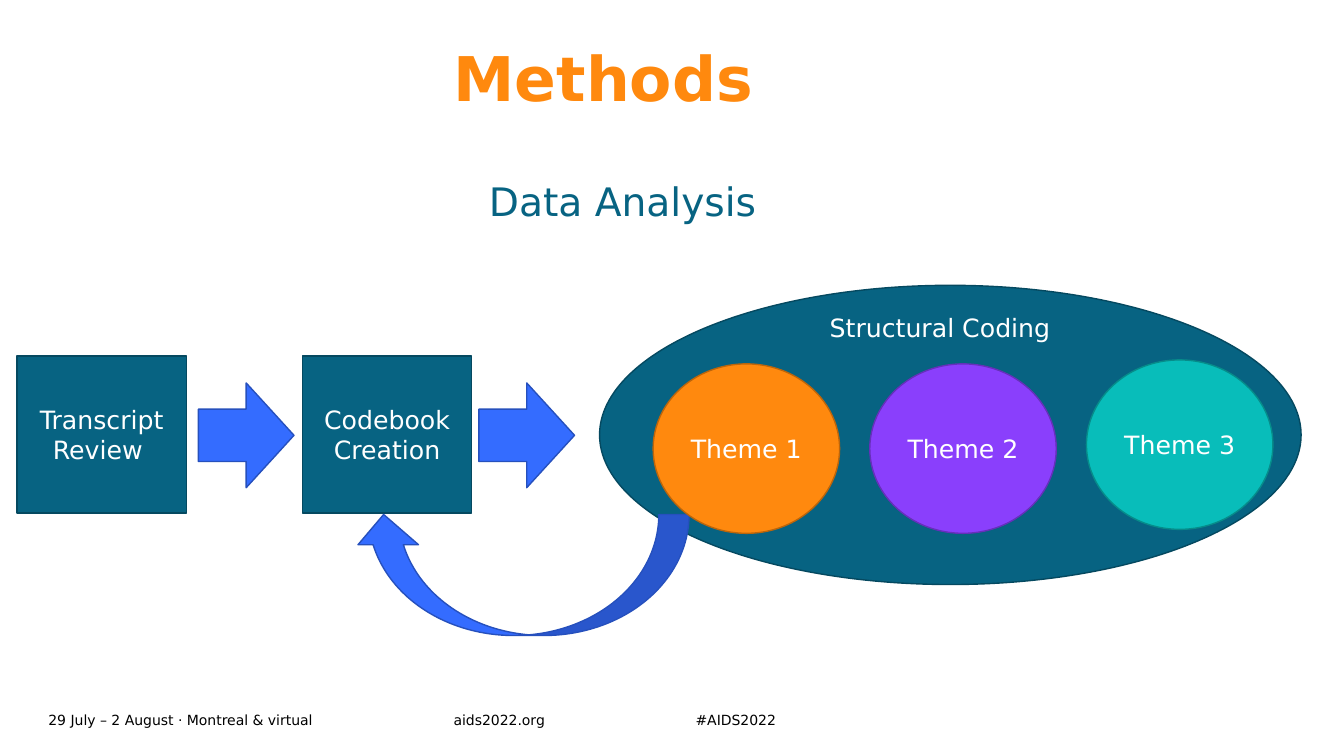
from dataclasses import dataclass

from pptx import Presentation
from pptx.dml.color import RGBColor
from pptx.enum.shapes import MSO_SHAPE
from pptx.enum.text import MSO_ANCHOR, MSO_AUTO_SIZE, PP_ALIGN
from pptx.util import Cm, Pt

FONT = "DejaVu Sans"
HUES = {
    "black": "000000",
    "white": "FFFFFF",
    "teal": "076382",
    "teal edge": "054960",
    "blue": "346CFF",
    "blue edge": "2650BD",
    "orange": "FF890E",
    "orange edge": "BD650A",
    "purple": "8A3FFC",
    "purple edge": "662FBA",
    "aqua": "08BDBA",
    "aqua edge": "068C8A",
}


@dataclass
class Box:
    left: float
    top: float
    width: float
    height: float


@dataclass
class Node:
    kind: MSO_SHAPE
    box: Box
    hue: str
    text: str = ""
    turn: float = 0


def tint(name: str) -> RGBColor:
    return RGBColor.from_string(HUES[name])


def place(shape, box: Box) -> None:
    shape.left, shape.top = Cm(box.left), Cm(box.top)
    shape.width, shape.height = Cm(box.width), Cm(box.height)


def write(shape, text: str, *, size: float = 18, hue: str = "white",
          bold: bool = False, align=PP_ALIGN.CENTER,
          anchor=MSO_ANCHOR.MIDDLE, inset: bool = True,
          lines: float = 1.0) -> None:
    frame = shape.text_frame
    frame.word_wrap = True
    frame.auto_size = MSO_AUTO_SIZE.NONE
    frame.vertical_anchor = anchor
    if not inset:
        frame.margin_left = frame.margin_right = Cm(0)
        frame.margin_top = frame.margin_bottom = Cm(0)
    frame.text = text
    para = frame.paragraphs[0]
    para.alignment = align
    para.line_spacing = lines
    font = para.runs[0].font
    font.name, font.size, font.bold = FONT, Pt(size), bold
    font.color.rgb = tint(hue)


def label(slide, box: Box, text: str, **style) -> None:
    shape = slide.shapes.add_textbox(0, 0, 0, 0)
    place(shape, box)
    write(shape, text, **style)


def draw(slide, node: Node) -> None:
    shape = slide.shapes.add_shape(node.kind, 0, 0, 0, 0)
    place(shape, node.box)
    shape.rotation = node.turn
    shape.shadow.inherit = False
    shape.fill.solid()
    shape.fill.fore_color.rgb = tint(node.hue)
    shape.line.color.rgb = tint(f"{node.hue} edge")
    shape.line.width = Pt(1)
    if node.text:
        write(shape, node.text)


def main() -> None:
    deck = Presentation()
    deck.slide_width, deck.slide_height = Cm(33.87), Cm(19.05)
    slide = deck.slides.add_slide(deck.slide_layouts[5])

    title = slide.shapes.title
    place(title, Box(11.43, 1.22, 21.21, 3.4))
    write(title, "Methods", size=44, hue="orange", bold=True,
          align=PP_ALIGN.LEFT, anchor=MSO_ANCHOR.TOP, inset=False, lines=0.9)

    for left, width, text in (
        (1.22, 10.21, "29 July – 2 August · Montreal & virtual"),
        (11.43, 4.9, "aids2022.org"),
        (17.53, 4.9, "#AIDS2022"),
    ):
        label(slide, Box(left, 17.83, width, 0.61), text, size=10,
              hue="black", align=PP_ALIGN.LEFT, inset=False)

    label(slide, Box(7.42, 4.34, 16.54, 1.57), "Data Analysis", size=28,
          hue="teal", anchor=MSO_ANCHOR.TOP)
    draw(slide, Node(MSO_SHAPE.OVAL, Box(15.11, 7.19, 17.68, 7.54), "teal"))
    label(slide, Box(20.45, 7.75, 6.48, 1.02), "Structural Coding",
          anchor=MSO_ANCHOR.TOP)

    for left, text in ((0.43, "Transcript Review "),
                       (7.62, "Codebook Creation")):
        draw(slide, Node(MSO_SHAPE.RECTANGLE, Box(left, 8.97, 4.27, 3.96),
                         "teal", text))
    for left in (5.0, 12.07):
        draw(slide, Node(MSO_SHAPE.RIGHT_ARROW, Box(left, 9.65, 2.41, 2.64),
                         "blue"))
    draw(slide, Node(MSO_SHAPE.CURVED_LEFT_ARROW,
                     Box(11.61, 10.26, 3.05, 8.46), "blue", turn=90))

    themes = (("orange", 9.17), ("purple", 9.17), ("aqua", 9.07))
    for step, (hue, top) in enumerate(themes):
        draw(slide, Node(MSO_SHAPE.OVAL,
                         Box(16.46 + 5.46 * step, top, 4.7, 4.27),
                         hue, f"Theme {step + 1}"))

    deck.save("out.pptx")


if __name__ == "__main__":
    main()
